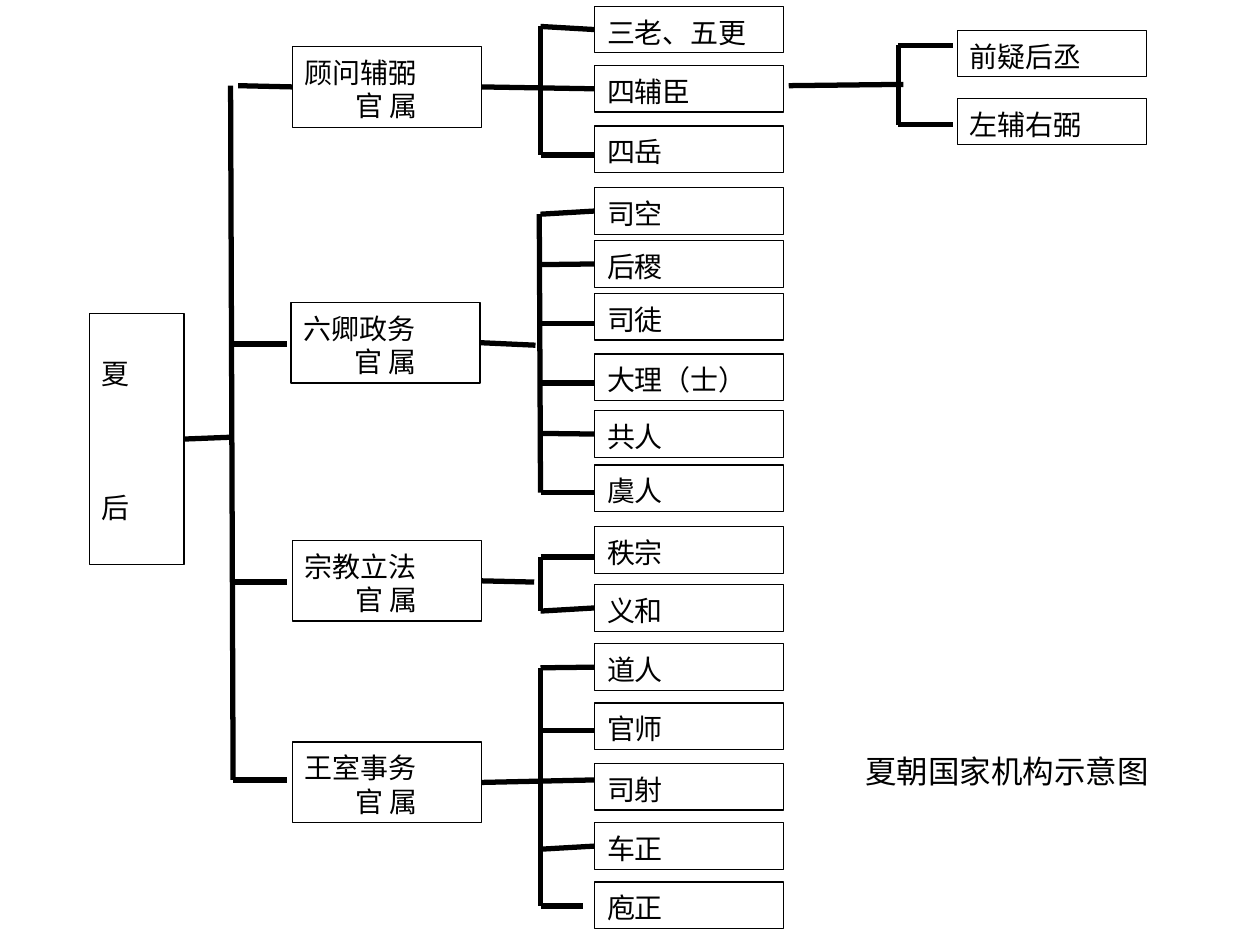
from lxml import etree
from pptx import Presentation, util as u
from pptx.dml.color import RGBColor
from pptx.enum import shapes, text
from pptx.oxml.ns import qn

COLORS = {"paper": "FFFFFF", "ink": "000000"}
FONT = "Noto Sans CJK SC"
ALIGN = text.PP_ALIGN

# Columns: left edges, box width and the x of each vertical spine
ROOT_X, GROUP_X, OFFICE_X, AIDE_X = 0.71, 2.32, 4.72, 7.6
BOX_W, GROUP_H, OFFICE_H = 1.5, 0.64, 0.37
SPINE_X, OFFICE_SPINE, AIDE_SPINE = 1.84, 4.29, 7.13

# Group: name, left, top, stem (y, end x), spine top x, offices
# Office: name, box top, branch y (None where the stem runs through)
GROUPS = [
    ("顾问辅弼", GROUP_X, 0.37, (0.68, OFFICE_X), 4.29,
     [("三老、五更", 0.05, 0.21), ("四辅臣", 0.52, None), ("四岳", 1, 1.23)]),
    ("六卿政务", GROUP_X - 0.01, 2.4, (2.74, 4.25), 4.28,
     [("司空", 1.49, 1.7), ("后稷", 1.91, 2.1), ("司徒", 2.33, 2.57),
      ("大理（士）", 2.81, 3.04), ("共人", 3.26, 3.44), ("虞人", 3.69, 3.91)]),
    ("宗教立法", GROUP_X, 4.29, (4.62, 4.24), 4.29,
     [("秩宗", 4.18, 4.42), ("义和", 4.64, 4.85)]),
    ("王室事务", GROUP_X, 5.89, (6.19, OFFICE_X), 4.29,
     [("道人", 5.11, 5.3), ("官师", 5.58, 5.8), ("司射", 6.06, None),
      ("车正", 6.53, 6.74), ("庖正", 7, 7.19)]),
]
AIDES = [("前疑后丞", 0.24, 0.36), ("左辅右弼", 0.78, 0.99)]
ROOT_BRANCHES = [(1.89, 2.32, 0.68), (1.85, 2.28, 2.73),
                 (1.85, 2.28, 4.62), (1.85, 2.28, 6.19)]

prs = Presentation()
prs.slide_width, prs.slide_height = u.Inches(10), u.Inches(7.5)
s = prs.slides.add_slide(prs.slide_layouts[6])
s.background.fill.solid()
s.background.fill.fore_color.rgb = RGBColor.from_string(COLORS["paper"])
boxes = []


def add_box(x, y, w, h, lines, size=16, border=True, left=0.1, top=0.07):
    """Add a box; each line is (words, alignment, space before in points)."""
    sp = s.shapes.add_shape(shapes.MSO_SHAPE.RECTANGLE,
                            *map(u.Inches, (x, y, w, h)))
    sp.shadow.inherit = False
    sp.fill.solid()
    sp.fill.fore_color.rgb = RGBColor.from_string(COLORS["paper"])
    if border:
        sp.line.color.rgb = RGBColor.from_string(COLORS["ink"])
        sp.line.width = u.Pt(0.75)
    else:
        sp.line.fill.background()
    tf = sp.text_frame
    layout = {"word_wrap": True, "vertical_anchor": text.MSO_ANCHOR.TOP,
              "margin_left": u.Inches(left), "margin_right": u.Inches(0.1),
              "margin_top": u.Inches(top), "margin_bottom": u.Inches(0.03)}
    for name, value in layout.items():
        setattr(tf, name, value)
    for i, (words, align, before) in enumerate(lines):
        p = tf.add_paragraph() if i else tf.paragraphs[0]
        p.alignment, p.line_spacing = align, u.Pt(size * 1.2)
        p.space_before = u.Pt(before)
        r = p.add_run()
        r.text = words
        r.font.size, r.font.name = u.Pt(size), FONT
        r.font.color.rgb = RGBColor.from_string(COLORS["ink"])
        etree.SubElement(r.font._element, qn("a:ea"), typeface=FONT)
    boxes.append(sp)


def side_at(x, y):
    """Find the box and side (1 left, 3 right) whose middle is at a point."""
    near = u.Inches(0.03)
    for sp in boxes:
        for side, edge in ((1, sp.left), (3, sp.left + sp.width)):
            if (abs(edge - u.Inches(x)) < near
                    and abs(sp.top + sp.height // 2 - u.Inches(y)) < near):
                return sp, side
    return None


def add_line(x1, y1, x2, y2):
    line = s.shapes.add_connector(shapes.MSO_CONNECTOR.STRAIGHT,
                                  *map(u.Inches, (x1, y1, x2, y2)))
    line.line.color.rgb = RGBColor.from_string(COLORS["ink"])
    line.line.width = u.Pt(3)
    etree.SubElement(line._element.spPr, qn("a:effectLst"))
    for join, point in ((line.begin_connect, (x1, y1)),
                        (line.end_connect, (x2, y2))):
        found = side_at(*point)
        if found:
            join(*found)


def add_fan(spine_x, top_x, end_x, ys):
    """Draw a vertical spine with one branch to the right at each y."""
    add_line(top_x, ys[0], spine_x, ys[-1])
    for y in ys:
        add_line(spine_x, y, end_x(y), y)


def add_offices(x, offices):
    for name, top, _ in offices:
        add_box(x, top, BOX_W, OFFICE_H, [(name, ALIGN.JUSTIFY, 0)])


add_box(ROOT_X, 2.49, 0.75, 1.99, top=0.34,
        lines=[("夏", ALIGN.JUSTIFY, 0), ("后", ALIGN.JUSTIFY, 57.6)])
for name, x, top, _, _, offices in GROUPS:
    add_box(x, top, BOX_W, GROUP_H,
            [(name, ALIGN.JUSTIFY, 0), ("官 属", ALIGN.CENTER, 0)])
    add_offices(OFFICE_X, offices)
add_offices(AIDE_X, AIDES)
add_box(6.42, 5.9, 3.05, 0.4, [("夏朝国家机构示意图", ALIGN.CENTER, 0)],
        size=18, border=False, left=0.19)

add_line(ROOT_X + 0.75, 3.47, SPINE_X, 3.47)
add_line(SPINE_X - 0.01, 0.68, SPINE_X + 0.01, 6.19)
for x1, x2, y in ROOT_BRANCHES:
    add_line(x1, y, x2, y)
for _, x, _, (stem_y, stem_end), top_x, offices in GROUPS:
    add_line(x + BOX_W, stem_y, stem_end, stem_y)
    add_fan(OFFICE_SPINE, top_x, lambda y: 4.63 if y > 7 else OFFICE_X,
            [y for _, _, y in offices if y])
add_line(6.26, 0.68, 7.17, 0.67)
add_fan(AIDE_SPINE, AIDE_SPINE, lambda y: 7.56, [y for _, _, y in AIDES])

prs.save("out.pptx")
